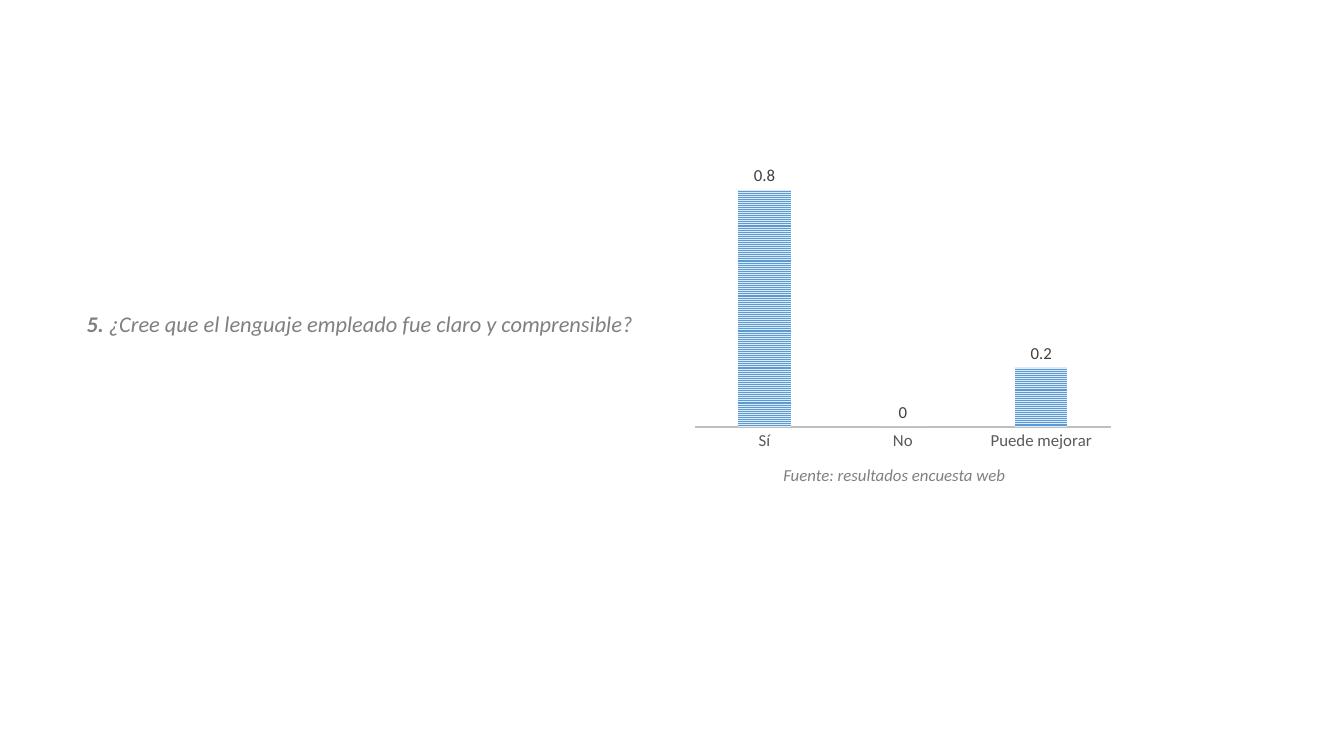
from pptx import Presentation, util as u
from pptx.chart import data as cd
from pptx.dml.color import RGBColor
from pptx.enum import chart as ch, dml

PX = 9144
FONT = "Calibri"
HUES = {"text": "808080", "axis": "595959", "label": "404040", "line": "BFBFBF",
        "bar": "5B9BD5", "pale": "DEEBF7", "base": "000000", "back": "FFFFFF"}


def hue(name):
    """Return the named colour."""
    return RGBColor.from_string(HUES[name])


def style(font, size, name):
    """Set the face, size and colour of a font."""
    font.name, font.size = FONT, u.Pt(size)
    font.color.rgb = hue(name)


def note(slide, box, parts, size):
    """Place one italic paragraph of (words, bold) parts in the box."""
    frame = slide.shapes.add_textbox(*(n * PX for n in box)).text_frame
    frame.word_wrap = True
    para = frame.paragraphs[0]
    for words, bold in parts:
        run = para.add_run()
        run.text = words
        style(run.font, size, "text")
        run.font.bold, run.font.italic = bold, True
    return para


def bars(slide, box):
    """Place the column chart of answers in the box."""
    data = cd.CategoryChartData()
    data.categories = ["Sí", "No", "Puede mejorar"]
    data.add_series("Series 1", (0.8, 0, 0.2))
    chart = slide.shapes.add_chart(
        ch.XL_CHART_TYPE.COLUMN_CLUSTERED, *(n * PX for n in box), data).chart
    chart.has_legend = chart.has_title = False
    style(chart.font, 10, "base")

    cats, vals = chart.category_axis, chart.value_axis
    cats.major_tick_mark = ch.XL_TICK_MARK.NONE
    style(cats.tick_labels.font, 12, "axis")
    cats.format.line.color.rgb = hue("line")
    cats.format.line.width = u.Pt(1.5)
    vals.visible = vals.has_major_gridlines = False
    vals.minimum_scale, vals.maximum_scale = 0, 0.9

    plot = chart.plots[0]
    plot.gap_width, plot.overlap = 164, -22
    plot.vary_by_categories = False
    fill = plot.series[0].format.fill
    fill.patterned()
    fill.pattern = dml.MSO_PATTERN.NARROW_HORIZONTAL
    fill.fore_color.rgb, fill.back_color.rgb = hue("bar"), hue("pale")
    plot.has_data_labels = True
    tags = plot.data_labels
    tags.show_value = True
    tags.position = ch.XL_LABEL_POSITION.OUTSIDE_END
    style(tags.font, 12, "label")


def main():
    """Build and save the slide."""
    deck = Presentation()
    deck.slide_width, deck.slide_height = 1333 * PX, 750 * PX
    slide = deck.slides.add_slide(deck.slide_layouts[6])
    slide.background.fill.solid()
    slide.background.fill.fore_color.rgb = hue("back")
    ask = [("5. ", True),
           ("¿Cree que el lenguaje empleado fue claro y comprensible?", False)]
    note(slide, (76, 303, 579, 64), ask, 16)
    cite = note(slide, (767, 458, 358, 84),
                [("Fuente: resultados encuesta web", False)], 12)
    cite.line_spacing = 0.9
    bars(slide, (681, 153, 429, 300))
    deck.save("out.pptx")


if __name__ == "__main__":
    main()
